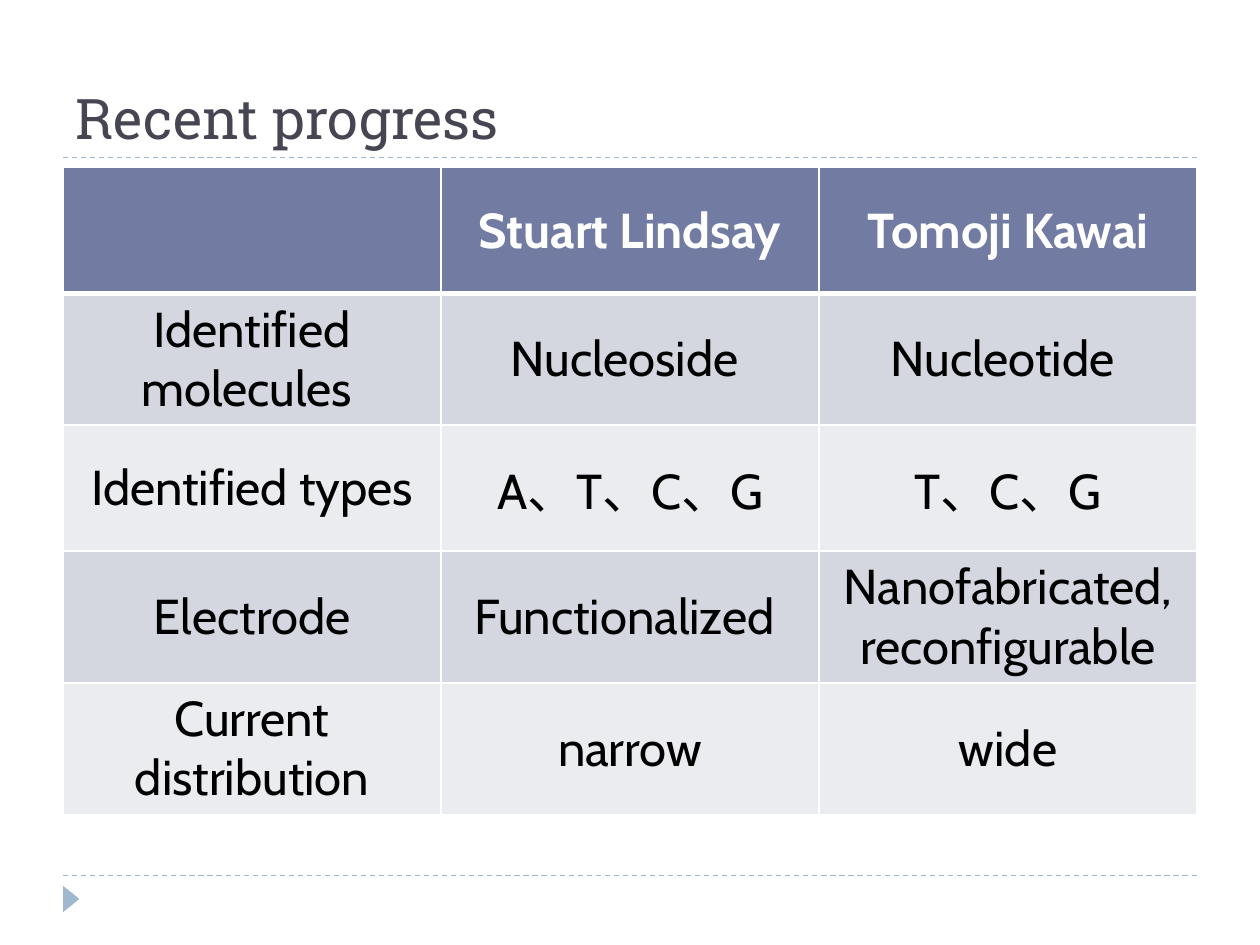
from lxml import etree
from pptx import Presentation
from pptx.dml.color import RGBColor
from pptx.enum.dml import MSO_LINE
from pptx.enum.shapes import MSO_CONNECTOR, MSO_SHAPE
from pptx.enum.text import MSO_ANCHOR, PP_ALIGN
from pptx.oxml.ns import qn
from pptx.util import Inches, Pt

STRAIGHT, TRIANGLE = MSO_CONNECTOR.STRAIGHT, MSO_SHAPE.ISOSCELES_TRIANGLE
DASH = MSO_LINE.DASH
MIDDLE, BOTTOM = MSO_ANCHOR.MIDDLE, MSO_ANCHOR.BOTTOM
LEFT, CENTER = PP_ALIGN.LEFT, PP_ALIGN.CENTER

COLORS = {
    "title": "464653", "rule": "9FB8CD", "header": "727CA3",
    "band_dark": "D5D7E0", "band_light": "EBECF0",
    "white": "FFFFFF", "text": "000000",
}
FORMATS = {
    "title": {"name": "Roboto Slab", "size": Pt(32), "bold": False},
    "header": {"name": "Cabin", "size": Pt(28), "bold": True},
    "body": {"name": "Cabin", "size": Pt(28), "bold": False},
}
ROWS = [
    ["", "Stuart Lindsay", "Tomoji Kawai"],
    ["Identified molecules ", "Nucleoside ", "Nucleotide "],
    ["Identified types", "A、T、C、G", "T、C、G"],
    ["Electrode", "Functionalized ", "Nanofabricated, reconfigurable"],
    ["Current distribution", "narrow", "wide"],
]


def rgb(name):
    return RGBColor.from_string(COLORS[name])


class SlideBuilder:
    """Places elements on a grid of 20 columns by 15 rows."""

    def __init__(self, prs):
        self.col, self.row = prs.slide_width / 20, prs.slide_height / 15
        self.s = prs.slides.add_slide(prs.slide_layouts[5])

    def box(self, x, y, w, h):
        return (round(x * self.col), round(y * self.row),
                round(w * self.col), round(h * self.row))

    def put_text(self, tf, text, style, color, align):
        tf.word_wrap = True
        p = tf.paragraphs[0]
        p.alignment = align
        if not text:
            return
        r = p.add_run()
        r.text = text
        for key, value in FORMATS[style].items():
            setattr(r.font, key, value)
        r.font.color.rgb = rgb(color)

    def title(self, text, *area):
        sp = self.s.shapes.title
        sp.left, sp.top, sp.width, sp.height = self.box(*area)
        sp.text_frame.vertical_anchor = BOTTOM
        self.put_text(sp.text_frame, text, "title", "title", LEFT)

    def rule(self, x, y, w):
        left, top, width, _ = self.box(x, y, w, 0)
        line = self.s.shapes.add_connector(STRAIGHT, left, top, left + width, top)
        line.line.color.rgb = rgb("rule")
        line.line.width = Pt(0.75)
        line.line.dash_style = DASH
        etree.SubElement(line._element.spPr, qn("a:effectLst"))

    def marker(self, *area):
        sp = self.s.shapes.add_shape(TRIANGLE, *self.box(*area))
        sp.rotation = 90
        sp.shadow.inherit = False
        sp.fill.solid()
        sp.fill.fore_color.rgb = rgb("rule")
        sp.line.fill.background()

    def borders(self, cell, widths):
        tcPr = cell._tc.get_or_add_tcPr()
        for i, (side, width) in enumerate(widths.items()):
            ln = etree.Element(qn(f"a:ln{side}"), w=str(Pt(width)))
            fill = etree.SubElement(ln, qn("a:solidFill"))
            etree.SubElement(fill, qn("a:srgbClr"), val=COLORS["white"])
            tcPr.insert(i, ln)

    def table(self, rows, *area):
        table = self.s.shapes.add_table(
            len(rows), len(rows[0]), *self.box(*area)).table
        for i, texts in enumerate(rows):
            header = i == 0
            fill = "header" if header else ("band_light", "band_dark")[i % 2]
            style, color = ("header", "white") if header else ("body", "text")
            widths = {"L": 1, "R": 1, "T": 3 if i == 1 else 1,
                      "B": 3 if header else 1}
            for j, text in enumerate(texts):
                cell = table.cell(i, j)
                cell.fill.solid()
                cell.fill.fore_color.rgb = rgb(fill)
                cell.vertical_anchor = MIDDLE
                self.put_text(cell.text_frame, text, style, color, CENTER)
                self.borders(cell, widths)


def main():
    prs = Presentation()
    prs.slide_width, prs.slide_height = Inches(10), Inches(7.5)
    page = SlideBuilder(prs)

    # Footer and title rules
    for y in (13.9, 2.5):
        page.rule(1, y, 18)
    page.marker(0.92, 14.14, 0.42, 0.26)

    # Title and comparison table
    page.title("Recent progress", 1, 0.34, 18, 2.16)
    page.table(ROWS, 1, 2.66, 18, 10)

    prs.save("out.pptx")


if __name__ == "__main__":
    main()
